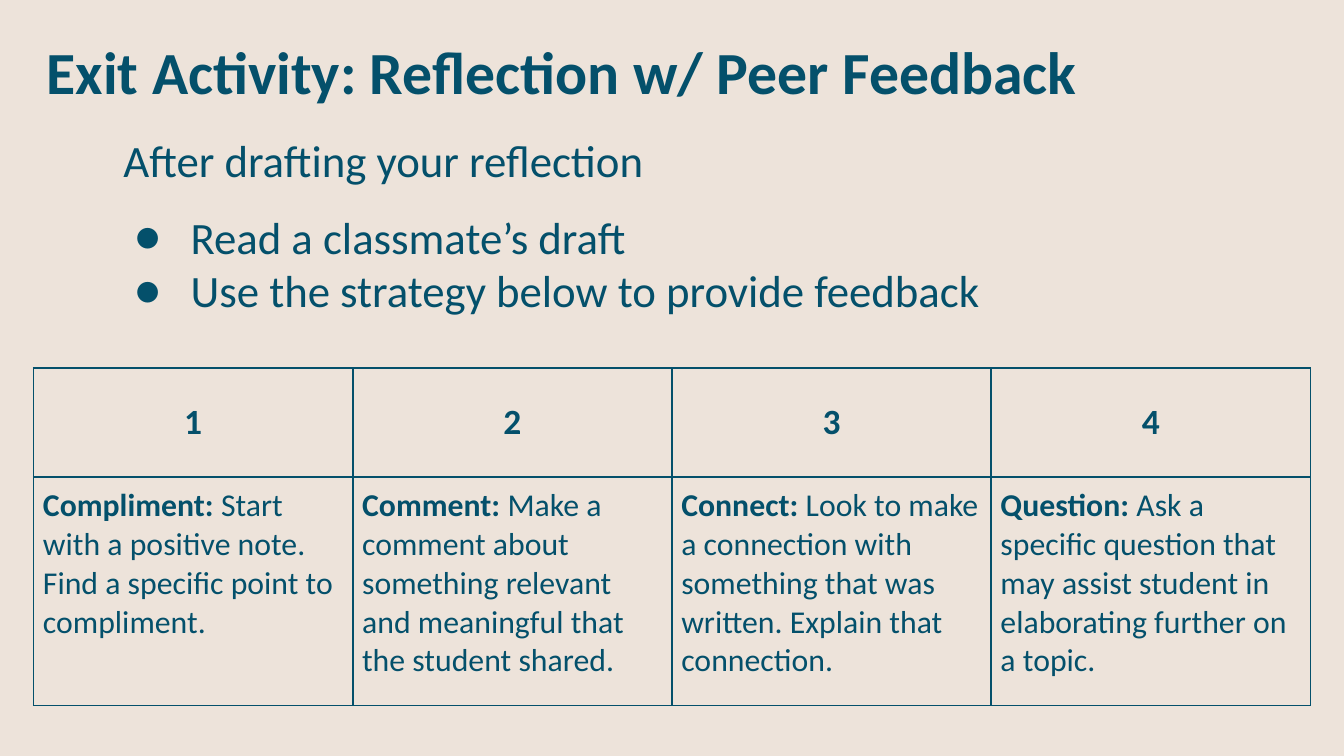
from lxml import etree
from pptx import Presentation
from pptx.dml.color import RGBColor
from pptx.enum import text
from pptx.oxml import ns
from pptx.util import Inches, Pt

title = "Exit Activity: Reflection w/ Peer Feedback"
lead = "After drafting your reflection"
tasks = ["Read a classmate’s draft", "Use the strategy below to provide feedback"]
steps = [
    ("Compliment:", " Start with a positive note. Find a specific point to compliment."),
    ("Comment:", " Make a comment about something relevant and meaningful that the student shared."),
    ("Connect:", " Look to make a connection with something that was written. Explain that connection."),
    ("Question:", " Ask a specific question that may assist student in elaborating further on a topic."),
]
theme = dict(ink="04506B", back="EDE3DA", font="Calibri", title=32, body=24, head=19, cell=17)
left, wide = 0.25, 9.5
rows = [0.81, 1.7]


def add(parent, tag, **attrs):
    return etree.SubElement(parent, ns.qn(tag), attrs)


def write(para, words, size="body", bold=False, align=None, before=0, bullet=None):
    if bullet:
        props = para._p.get_or_add_pPr()
        props.set("marL", str(Inches(0.5)))
        props.set("indent", str(Inches(-0.42)))
        add(add(props, "a:buClr"), "a:srgbClr", val=theme["ink"])
        add(props, "a:buSzPts", val=str(theme[size] * 100))
        add(props, "a:buFont", typeface=theme["font"])
        add(props, "a:buChar", char=bullet)
    if before:
        para.space_before = Pt(before)
    if align is not None:
        para.alignment = align
    run = para.add_run()
    run.text = words
    font = run.font
    font.name, font.size, font.bold = theme["font"], Pt(theme[size]), bold
    font.color.rgb = RGBColor.from_string(theme["ink"])


def inset(area, gap):
    area.margin_left = area.margin_right = Inches(gap)
    area.margin_top = area.margin_bottom = Inches(gap)


def box(slide, *place):
    frame = slide.shapes.add_textbox(*map(Inches, place)).text_frame
    frame.word_wrap = True
    inset(frame, 0.1)
    return frame


def border(cell):
    props = cell._tc.get_or_add_tcPr()
    for side in "LRTB":
        line = add(props, "a:ln" + side, w=str(Pt(1)))
        add(add(line, "a:solidFill"), "a:srgbClr", val=theme["ink"])
    cell.fill.background()


def grid(slide):
    count = len(steps)
    place = map(Inches, (left, 2.74, wide, sum(rows)))
    table = slide.shapes.add_table(len(rows), count, *place).table
    table.first_row = table.horz_banding = False
    for row, high in zip(table.rows, rows):
        row.height = Inches(high)
    for col in table.columns:
        col.width = Inches(wide / count)
    for cell in table.iter_cells():
        inset(cell, 0.07)
        border(cell)
    for i, (name, rest) in enumerate(steps):
        head, body = table.cell(0, i), table.cell(1, i)
        head.vertical_anchor = text.MSO_ANCHOR.MIDDLE
        write(head.text_frame.paragraphs[0], str(i + 1), size="head", bold=True,
              align=text.PP_ALIGN.CENTER)
        para = body.text_frame.paragraphs[0]
        write(para, name, size="cell", bold=True)
        write(para, rest, size="cell")


def main():
    deck = Presentation()
    deck.slide_width, deck.slide_height = Inches(10), Inches(10 * 9 / 16)
    slide = deck.slides.add_slide(deck.slide_layouts[6])
    fill = slide.background.fill
    fill.solid()
    fill.fore_color.rgb = RGBColor.from_string(theme["back"])

    grid(slide)
    frame = box(slide, 0.82, 0.89, 8.52, 1.58)
    write(frame.paragraphs[0], lead)
    for i, task in enumerate(tasks):
        write(frame.add_paragraph(), task, before=0 if i else 12, bullet="●")
    write(box(slide, left, 0.16, wide, 0.74).paragraphs[0], title, size="title", bold=True)
    deck.save("out.pptx")


if __name__ == "__main__":
    main()
